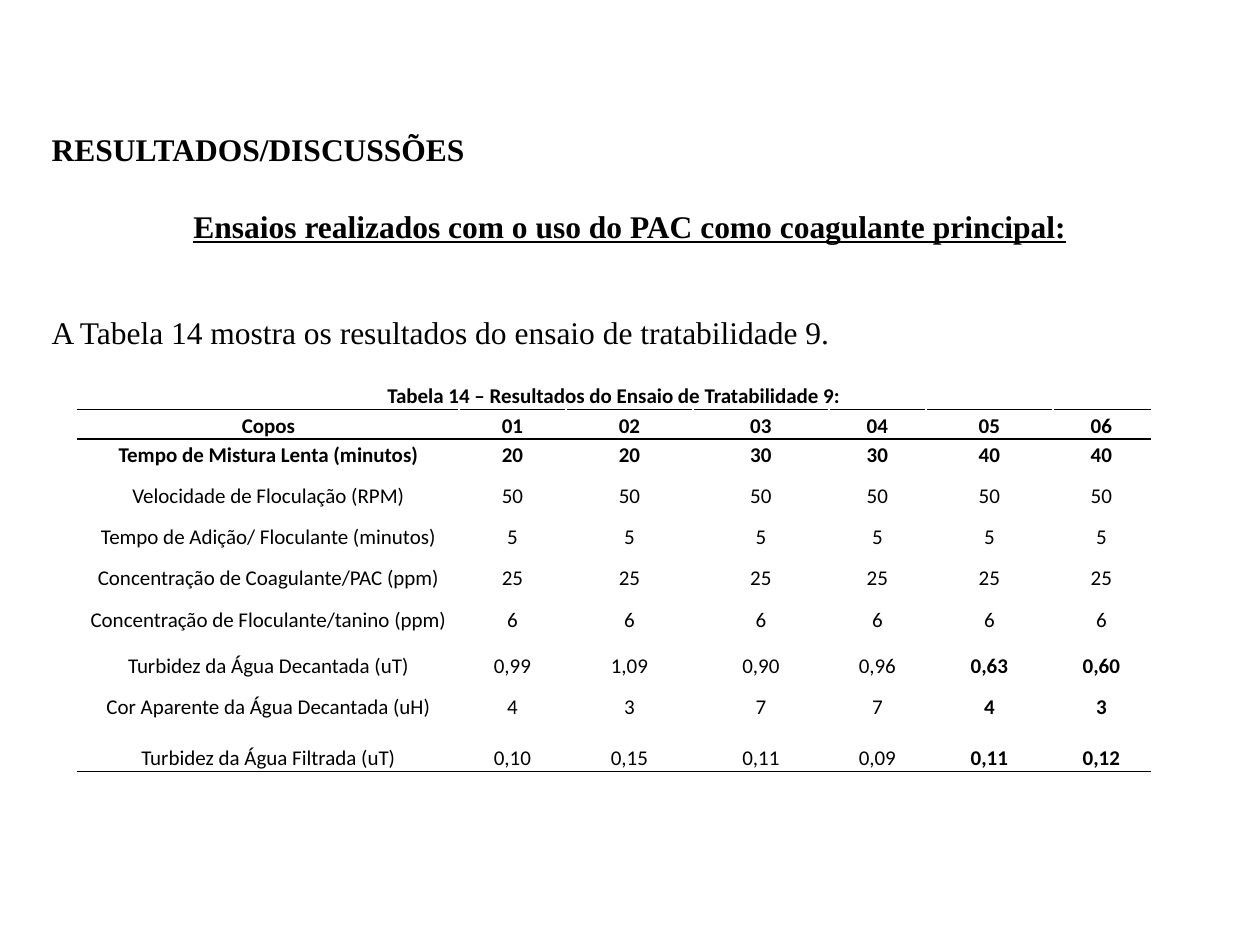
"""Build the slide with the results of treatability test 9."""
from lxml.etree import SubElement as Sub
from pptx import Presentation
from pptx.dml.color import RGBColor
from pptx.enum.text import MSO_ANCHOR as Anchor, MSO_AUTO_SIZE as Fit, PP_ALIGN as Align
from pptx.oxml.ns import qn
from pptx.util import Pt

PX = 914400 // 126
INK = "000000"


def style(para, face, size, bold, align):
    para.alignment = align
    font = para.font
    font.name, font.size, font.bold = face, Pt(size), bold
    font.color.rgb = RGBColor.from_string(INK)


def rule(cell, side):
    line = Sub(cell._tc.get_or_add_tcPr(), qn("a:" + side), w=str(Pt(1)))
    Sub(Sub(line, qn("a:solidFill")), qn("a:srgbClr"), val=INK)


deck = Presentation()
deck.slide_width, deck.slide_height = 1260 * PX, 945 * PX
slide = deck.slides.add_slide(deck.slide_layouts[5])

head = slide.shapes.title
head.left, head.top, head.width, head.height = [n * PX for n in (39, 49, 1182, 310)]
frame = head.text_frame
frame.word_wrap = True
frame.auto_size = Fit.NONE
frame.vertical_anchor = Anchor.BOTTOM
frame.margin_bottom = 8 * PX
lines = [
    ("RESULTADOS/DISCUSSÕES", True, False, Align.JUSTIFY, 0),
    ("Ensaios realizados com o uso do PAC como coagulante principal:", True, True, Align.CENTER, 22.5),
    ("A Tabela 14 mostra os resultados do ensaio de tratabilidade 9.", False, False, Align.LEFT, 39),
]
frame.text = "\n".join(line[0] for line in lines)
for para, (text, bold, under, align, gap) in zip(frame.paragraphs, lines):
    style(para, "Times New Roman", 18, bold, align)
    para.font.underline = under
    para.space_before = Pt(gap)

rows = [
    ["Tabela 14 – Resultados do Ensaio de Tratabilidade 9:"] + [""] * 6,
    ["Copos", "01", "02", "03", "04", "05", "06"],
    ["Tempo de Mistura Lenta (minutos)", "20", "20", "30", "30", "40", "40"],
    ["Velocidade de Floculação (RPM)"] + ["50"] * 6,
    ["Tempo de Adição/ Floculante (minutos)"] + ["5"] * 6,
    ["Concentração de Coagulante/PAC (ppm)"] + ["25"] * 6,
    ["Concentração de Floculante/tanino (ppm)"] + ["6"] * 6,
    ["Turbidez da Água Decantada (uT)", "0,99", "1,09", "0,90", "0,96", "0,63", "0,60"],
    ["Cor Aparente da Água Decantada (uH)", "4", "3", "7", "7", "4", "3"],
    ["Turbidez da Água Filtrada (uT)", "0,10", "0,15", "0,11", "0,09", "0,11", "0,12"],
]
wide = [381, 107, 127, 136, 97, 127, 97]
high = [28, 28, 41, 41, 41, 42, 46, 41, 51, 30]
rules = {0: ["lnB"], 1: ["lnT", "lnB"], 2: ["lnT"], 9: ["lnB"]}
grid = slide.shapes.add_table(
    len(rows), len(wide), 78 * PX, 380 * PX, sum(wide) * PX, sum(high) * PX
).table
grid.first_row = grid.horz_banding = False
for col, size in zip(grid.columns, wide):
    col.width = size * PX
for row, size in zip(grid.rows, high):
    row.height = size * PX
for r, row in enumerate(rows):
    for c, text in enumerate(row):
        cell = grid.cell(r, c)
        cell.text = text
        cell.margin_left = cell.margin_right = 6 * PX
        cell.margin_top = cell.margin_bottom = 0
        para = cell.text_frame.paragraphs[0]
        style(para, "Calibri", 12, r < 3 or (r > 6 and c > 4), Align.CENTER)
        para.line_spacing = 1.15
        para.space_after = Pt(10)
        for side in rules.get(r, []):
            rule(cell, side)
        cell.fill.background()
grid.cell(0, 0).merge(grid.cell(0, 6))

deck.save("out.pptx")
